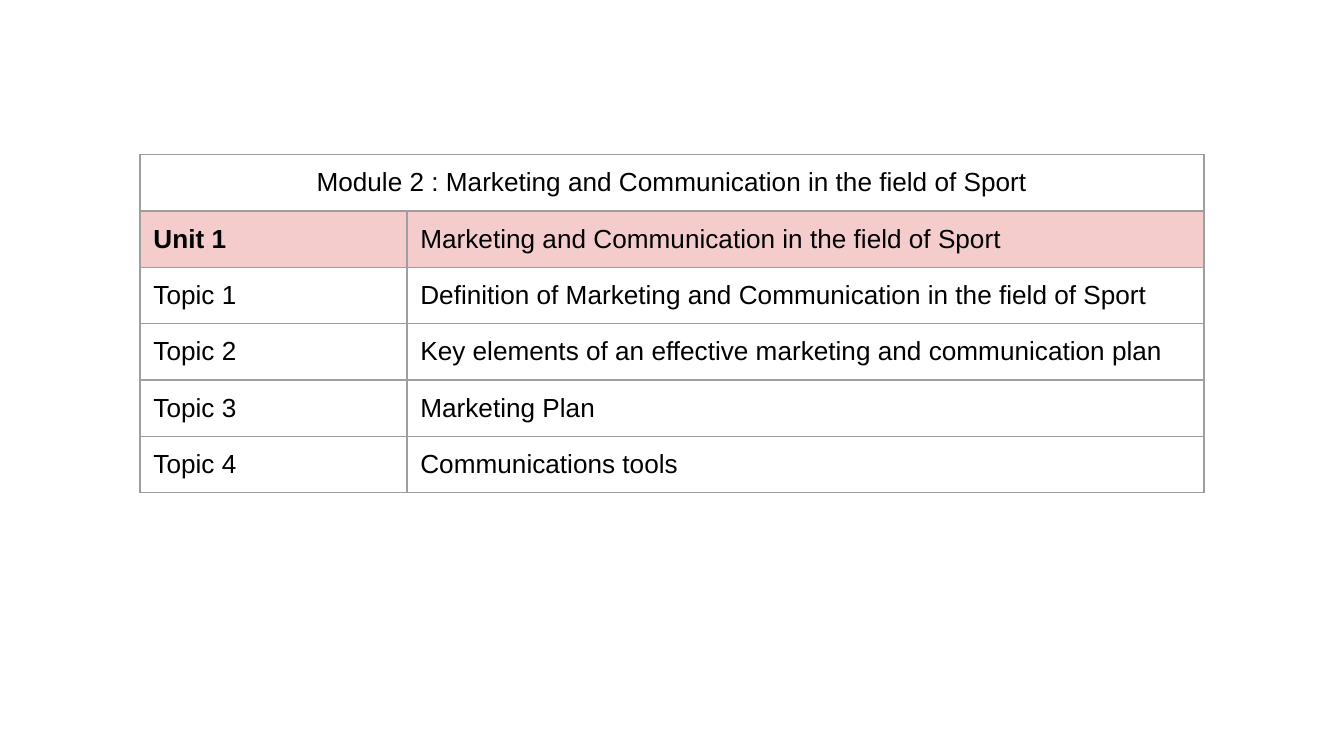
from lxml import etree
from pptx import Presentation
from pptx.dml.color import RGBColor
from pptx.enum.text import PP_ALIGN
from pptx.oxml.ns import qn
from pptx.util import Pt

CENTER, LEFT = PP_ALIGN.CENTER, PP_ALIGN.LEFT
BLACK = RGBColor(0x00, 0x00, 0x00)
PINK = RGBColor(0xF4, 0xCC, 0xCC)
GRAY = RGBColor(0x9E, 0x9E, 0x9E)

TITLE = "Module 2 : Marketing and Communication in the field of Sport"
UNIT = ("Unit 1", "Marketing and Communication in the field of Sport")
TOPICS = [
    "Definition of Marketing and Communication in the field of Sport",
    "Key elements of an effective marketing and communication plan",
    "Marketing Plan",
    "Communications tools",
]
ROWS = [(TITLE, ""), UNIT] + [
    (f"Topic {n}", topic) for n, topic in enumerate(TOPICS, 1)
]

SLIDE_W, SLIDE_H = 720, 405
LEFT_X, TOP_Y = 75, 82.8
COL_WIDTHS = (143, 427)
ROW_H = 30.2
BORDER_W = 0.75
MARGINS = dict.fromkeys(
    ("margin_left", "margin_right", "margin_top", "margin_bottom"), Pt(7.2)
)
FONT = {"name": "Arial", "size": Pt(14)}


def add_borders(cell):
    tc_pr = cell._tc.get_or_add_tcPr()
    for side in ("a:lnL", "a:lnR", "a:lnT", "a:lnB"):
        ln = etree.SubElement(tc_pr, qn(side), w=str(Pt(BORDER_W)))
        fill = etree.SubElement(ln, qn("a:solidFill"))
        etree.SubElement(fill, qn("a:srgbClr"), val=str(GRAY))


def format_cell(cell, text, align, bold, color):
    for name, value in MARGINS.items():
        setattr(cell, name, value)
    add_borders(cell)
    if color is None:
        cell.fill.background()
    else:
        cell.fill.solid()
        cell.fill.fore_color.rgb = color
    p = cell.text_frame.paragraphs[0]
    p.alignment = align
    if text:
        r = p.add_run()
        r.text = text
        for name, value in {**FONT, "bold": bold}.items():
            setattr(r.font, name, value)
        r.font.color.rgb = BLACK


def main():
    prs = Presentation()
    prs.slide_width, prs.slide_height = Pt(SLIDE_W), Pt(SLIDE_H)
    s = prs.slides.add_slide(prs.slide_layouts[6])
    table = s.shapes.add_table(
        len(ROWS), len(COL_WIDTHS), Pt(LEFT_X), Pt(TOP_Y),
        Pt(sum(COL_WIDTHS)), Pt(ROW_H * len(ROWS)),
    ).table
    table.first_row = table.horz_banding = False
    for column, width in zip(table.columns, COL_WIDTHS):
        column.width = Pt(width)
    for i, row in enumerate(ROWS):
        table.rows[i].height = Pt(ROW_H)
        for j, text in enumerate(row):
            format_cell(
                table.cell(i, j), text,
                align=CENTER if i == 0 else LEFT,
                bold=text == UNIT[0],
                color=PINK if row == UNIT else None,
            )
    table.cell(0, 0).merge(table.cell(0, len(COL_WIDTHS) - 1))
    prs.save("out.pptx")


if __name__ == "__main__":
    main()
